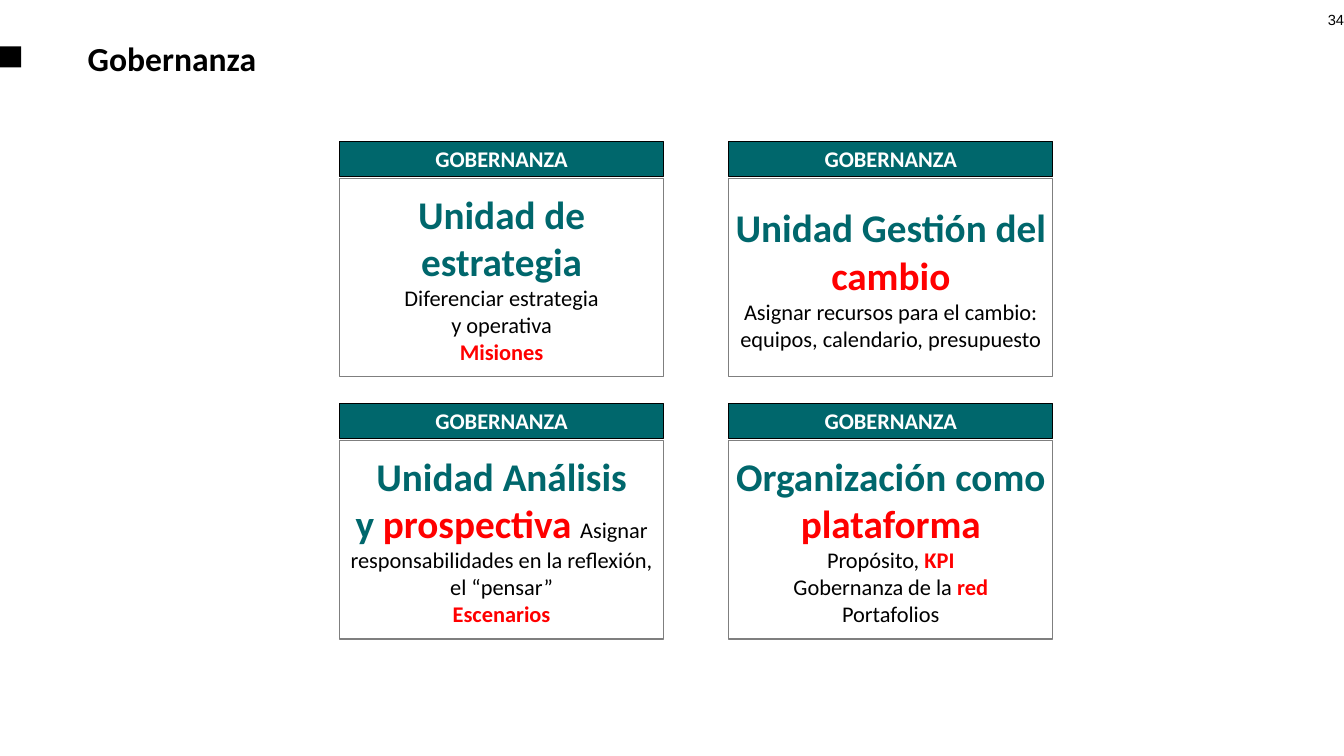
from pptx import Presentation
from pptx import util as u
from pptx.dml.color import RGBColor
from pptx.enum import shapes, text

TEAL, RED, BLACK, WHITE, GREY = "00676C", "FF0000", "000000", "FFFFFF", "7F7F7F"
UNIT, KEY_UNIT = (28, TEAL, True), (28, RED, True)
BODY, KEY = (16, BLACK, False), (16, RED, True)
LABEL = (16, WHITE, True)
CARD_W, LABEL_H, BODY_TOP, BODY_H = 3.21, 0.35, 0.37, 1.97
LEFT, TOP, COLUMN_STEP, ROW_STEP = 3.37, 1.4, 3.86, 2.6

CARDS = [
    [
        [[("Unidad de estrategia", UNIT)],
         [("Diferenciar estrategia", BODY)],
         [("y operativa", BODY)],
         [("Misiones", KEY)]],
        [[("Unidad Gestión del ", UNIT), ("cambio", KEY_UNIT)],
         [("Asignar recursos para el cambio: equipos, calendario, presupuesto", BODY)]],
    ],
    [
        [[("Unidad Análisis", UNIT)],
         [("y ", UNIT), ("prospectiva ", KEY_UNIT),
          ("Asignar responsabilidades en la reflexión, el “pensar”", BODY)],
         [("Escenarios", KEY)]],
        [[("Organización como ", UNIT), ("plataforma", KEY_UNIT)],
         [("Propósito, ", BODY), ("KPI", KEY)],
         [("Gobernanza de la ", BODY), ("red", KEY)],
         [("Portafolios", BODY)]],
    ],
]


def colour(hex_value):
    """Turn a hex string into a colour."""
    return RGBColor.from_string(hex_value)


def style(font, size, hex_value, bold, name="Calibri"):
    """Set the look of a font."""
    font.size, font.bold, font.name = u.Pt(size), bold, name
    font.color.rgb = colour(hex_value)


def add_box(slide, left, top, width, height, fill, line=None):
    """Add a flat rectangle, with a hairline border when a line colour is given."""
    box = slide.shapes.add_shape(
        shapes.MSO_SHAPE.RECTANGLE, *map(u.Inches, (left, top, width, height)))
    box.shadow.inherit = False
    box.fill.solid()
    box.fill.fore_color.rgb = colour(fill)
    if line:
        box.line.color.rgb = colour(line)
        box.line.width = u.Pt(0)
    else:
        box.line.fill.background()
    return box


def write(box, paragraphs, side_inset=0.1):
    """Fill a box with centred paragraphs made of styled runs."""
    frame = box.text_frame
    frame.word_wrap = True
    frame.vertical_anchor = text.MSO_ANCHOR.MIDDLE
    frame.margin_left = frame.margin_right = u.Inches(side_inset)
    for index, pieces in enumerate(paragraphs):
        paragraph = frame.add_paragraph() if index else frame.paragraphs[0]
        paragraph.alignment = text.PP_ALIGN.CENTER
        for words, look in pieces:
            run = paragraph.add_run()
            run.text = words
            style(run.font, *look)


def add_card(slide, left, top, paragraphs, side_inset):
    """Place a governance card: its body with a label above."""
    body = add_box(slide, left, top + BODY_TOP, CARD_W, BODY_H, WHITE, GREY)
    write(body, paragraphs, side_inset)
    label = add_box(slide, left, top, CARD_W, LABEL_H, TEAL, BLACK)
    write(label, [[("GOBERNANZA", LABEL)]])


def add_header(slide):
    """Place the title, the square marker and the page number."""
    add_box(slide, 0, 0.46, 0.21, 0.21, BLACK)
    title = slide.shapes.title
    title.left, title.top, title.width, title.height = map(
        u.Inches, (0.77, 0.25, 11.81, 0.66))
    title.text_frame.text = "Gobernanza"
    title.text_frame.vertical_anchor = text.MSO_ANCHOR.MIDDLE
    heading = title.text_frame.paragraphs[0]
    heading.alignment = text.PP_ALIGN.LEFT
    style(heading.runs[0].font, 24, BLACK, True)

    page = slide.shapes.add_textbox(*map(u.Inches, (12.79, 0.06, 0.54, 0.4)))
    page.text_frame.word_wrap = True
    page.text_frame.margin_right = 0
    page.text_frame.text = "34"
    number = page.text_frame.paragraphs[0]
    number.alignment = text.PP_ALIGN.RIGHT
    style(number.runs[0].font, 10.5, BLACK, False, "Arial")


def add_cards(slide, left, top):
    """Lay the cards out in a grid from the given corner."""
    for row, cards in enumerate(CARDS):
        for column, paragraphs in enumerate(cards):
            add_card(slide, left + column * COLUMN_STEP, top + row * ROW_STEP,
                     paragraphs, 0 if column else 0.1)


def main():
    """Build and save the slide."""
    deck = Presentation()
    deck.slide_width, deck.slide_height = u.Inches(13.33), u.Inches(7.5)
    slide = deck.slides.add_slide(deck.slide_layouts.get_by_name("Title Only"))
    add_header(slide)
    add_cards(slide, LEFT, TOP)
    deck.save("out.pptx")


if __name__ == "__main__":
    main()
